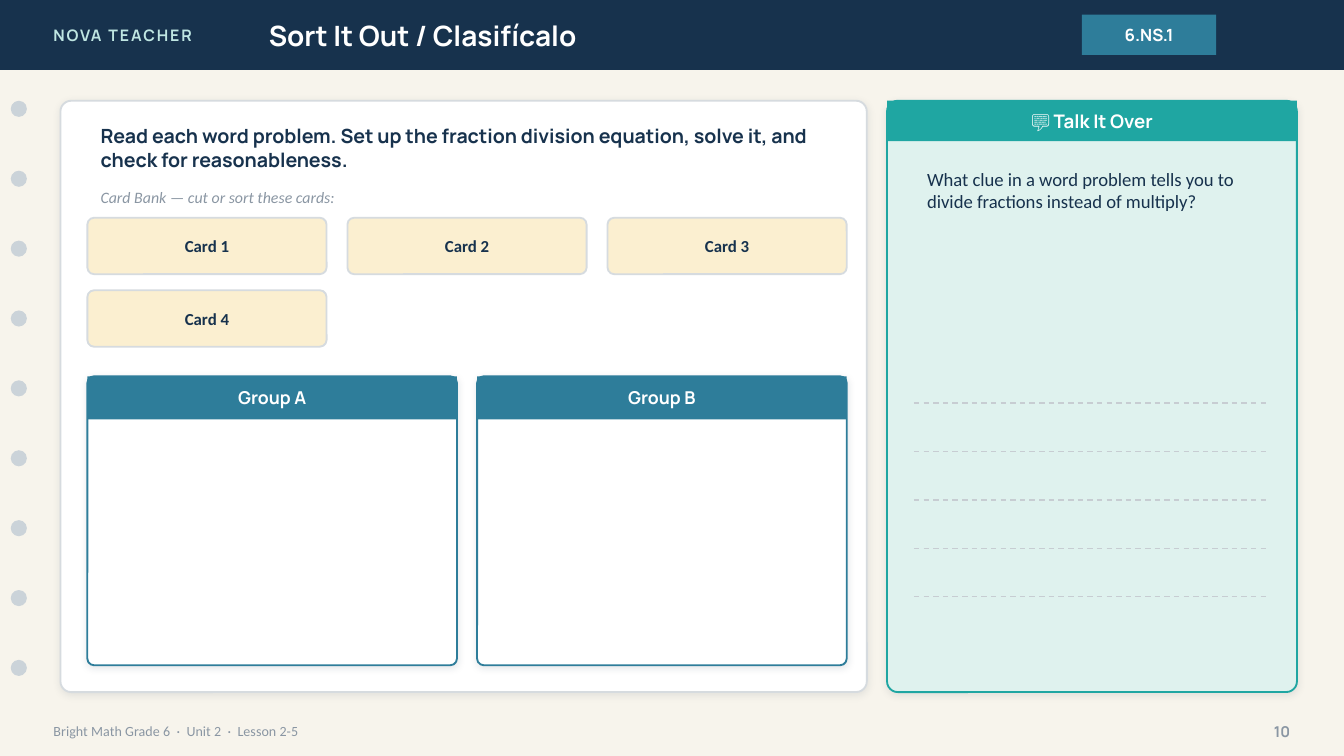
"""Build the "Sort It Out" fraction division worksheet slide."""
import pptx
import pptx.dml.color
import pptx.enum.dml
import pptx.enum.shapes
import pptx.enum.text
import pptx.oxml
import pptx.oxml.ns
import pptx.util

Inches = pptx.util.Inches
Pt = pptx.util.Pt
RGB = pptx.dml.color.RGBColor.from_string
SHAPE = pptx.enum.shapes.MSO_SHAPE
ALIGN = pptx.enum.text.PP_ALIGN
ANCHOR = pptx.enum.text.MSO_ANCHOR
NS = pptx.oxml.ns.nsdecls("a")

C = {
    "paper": "F7F4EC", "navy": "17324D", "mint": "BFE6E2", "white": "FFFFFF",
    "blue": "2E7D9A", "hole": "CBD3D9", "grey": "8A96A3", "border": "D6DBDF",
    "cream": "FBEFD0", "pale": "DFF2EE", "teal": "1FA6A2", "rule": "C7CDD2",
}
SHADOW = (
    f'<a:effectLst {NS}><a:outerShdw blurRad="50800" dist="12700" dir="5400000" '
    'algn="bl" rotWithShape="0"><a:srgbClr val="1C2E42"><a:alpha val="10000"/>'
    '</a:srgbClr></a:outerShdw></a:effectLst>'
)

prs = pptx.Presentation()
prs.slide_width, prs.slide_height = Inches(10), Inches(10 * 9 / 16)
s = prs.slides.add_slide(prs.slide_layouts[5])
s.background.fill.solid()
s.background.fill.fore_color.rgb = RGB(C["paper"])


def box(kind, x, y, w, h, fill, line=None, radius=0, shadow=False):
    sp = s.shapes.add_shape(kind, Inches(x), Inches(y), Inches(w), Inches(h))
    sp.fill.solid()
    sp.fill.fore_color.rgb = RGB(C[fill])
    if line:
        sp.line.color.rgb = RGB(C[line])
        sp.line.width = Pt(1)
    else:
        sp.line.fill.background()
    if radius:
        sp.adjustments[0] = radius / min(w, h)
    if shadow:
        sp._element.spPr.append(pptx.oxml.parse_xml(SHADOW))
    else:
        sp.shadow.inherit = False
    return sp


def write(sp, text, size, font, color, bold=True, align=ALIGN.CENTER):
    tf = sp.text_frame
    tf.word_wrap = True
    tf.auto_size = pptx.enum.text.MSO_AUTO_SIZE.NONE
    tf.vertical_anchor = ANCHOR.MIDDLE
    p = tf.paragraphs[0]
    p.alignment = align
    r = p.add_run()
    r.text = text
    r.font.size = Pt(size)
    r.font.name = font
    r.font.bold = bold
    r.font.color.rgb = RGB(C[color])
    return r


box(SHAPE.RECTANGLE, 0, 0, 10, 0.52, "navy")
title = s.shapes.title
title.left, title.top = Inches(1.9), Inches(0)
title.width, title.height = Inches(5.6), Inches(0.52)
write(title, "Sort It Out / Clasifícalo", 15, "Manrope", "white", align=ALIGN.LEFT)
s.shapes._spTree.append(title._element)
standard = box(SHAPE.RECTANGLE, 8.05, 0.11, 1, 0.3, "blue")
write(standard, "6.NS.1", 9, "Manrope", "white")

for i in range(9):
    box(SHAPE.OVAL, 0.08, 0.75 + 0.52 * i, 0.12, 0.12, "hole")

box(SHAPE.ROUNDED_RECTANGLE, 0.45, 0.75, 6, 4.4, "white", "border", 0.08, True)

for i in range(4):
    row, col = divmod(i, 3)
    card = box(SHAPE.ROUNDED_RECTANGLE, 0.65 + 3.87 * col / 2, 1.62 + 0.54 * row,
               1.78, 0.42, "cream", "border", 0.05)
    write(card, f"Card {i + 1}", 9, "Calibri", "navy")

panels = [
    ("Group A", 0.65, 2.8, 2.75, 2.15, 0.32, "white", "blue", 0.05, 9.5),
    ("Group B", 3.55, 2.8, 2.75, 2.15, 0.32, "white", "blue", 0.05, 9.5),
    ("💬 Talk It Over", 6.6, 0.75, 3.05, 4.4, 0.3, "pale", "teal", 0.08, 10),
]
for name, x, y, w, h, head_h, fill, accent, radius, size in panels:
    box(SHAPE.ROUNDED_RECTANGLE, x, y, w, h, fill, accent, radius, True)
    head = box(SHAPE.RECTANGLE, x, y, w, head_h, accent)
    write(head, name, size, "Manrope", "white")

labels = [
    ("NOVA TEACHER", 0.3, 0, 2.4, 0.52, 8.5, "Manrope", "mint", True),
    ("Read each word problem. Set up the fraction division equation, solve it, "
     "and check for reasonableness.", 0.65, 0.9, 5.6, 0.4, 10.5, "Manrope", "navy", True),
    ("Card Bank — cut or sort these cards:",
     0.65, 1.35, 5.6, 0.24, 8.5, "Calibri", "grey", False),
    ("What clue in a word problem tells you to divide fractions instead of multiply?",
     6.8, 1.2, 2.7, 1.5, 10, "Calibri", "navy", False),
    ("Bright Math Grade 6  ·  Unit 2  ·  Lesson 2-5",
     0.3, 5.3, 7, 0.28, 7.5, "Calibri", "grey", False),
    ("10", 9.2, 5.3, 0.5, 0.28, 8, "Manrope", "grey", True),
]
for text, x, y, w, h, size, font, color, bold in labels:
    sp = s.shapes.add_textbox(Inches(x), Inches(y), Inches(w), Inches(h))
    r = write(sp, text, size, font, color, bold, ALIGN.LEFT)
    if text == "NOVA TEACHER":
        r._r.get_or_add_rPr().set("spc", "100")
    elif text.startswith("Card Bank"):
        r.font.italic = True
    elif text.startswith("What clue"):
        sp.text_frame.vertical_anchor = ANCHOR.TOP
    elif text == "10":
        sp.text_frame.paragraphs[0].alignment = ALIGN.RIGHT

for i in range(5):
    y = Inches(3 + 0.36 * i)
    rule = s.shapes.add_connector(pptx.enum.shapes.MSO_CONNECTOR.STRAIGHT,
                                  Inches(6.8), y, Inches(9.45), y)
    rule.line.color.rgb = RGB(C["rule"])
    rule.line.width = Pt(0.75)
    rule.line.dash_style = pptx.enum.dml.MSO_LINE.DASH
    rule._element.spPr.append(pptx.oxml.parse_xml(f"<a:effectLst {NS}/>"))

prs.save("out.pptx")
